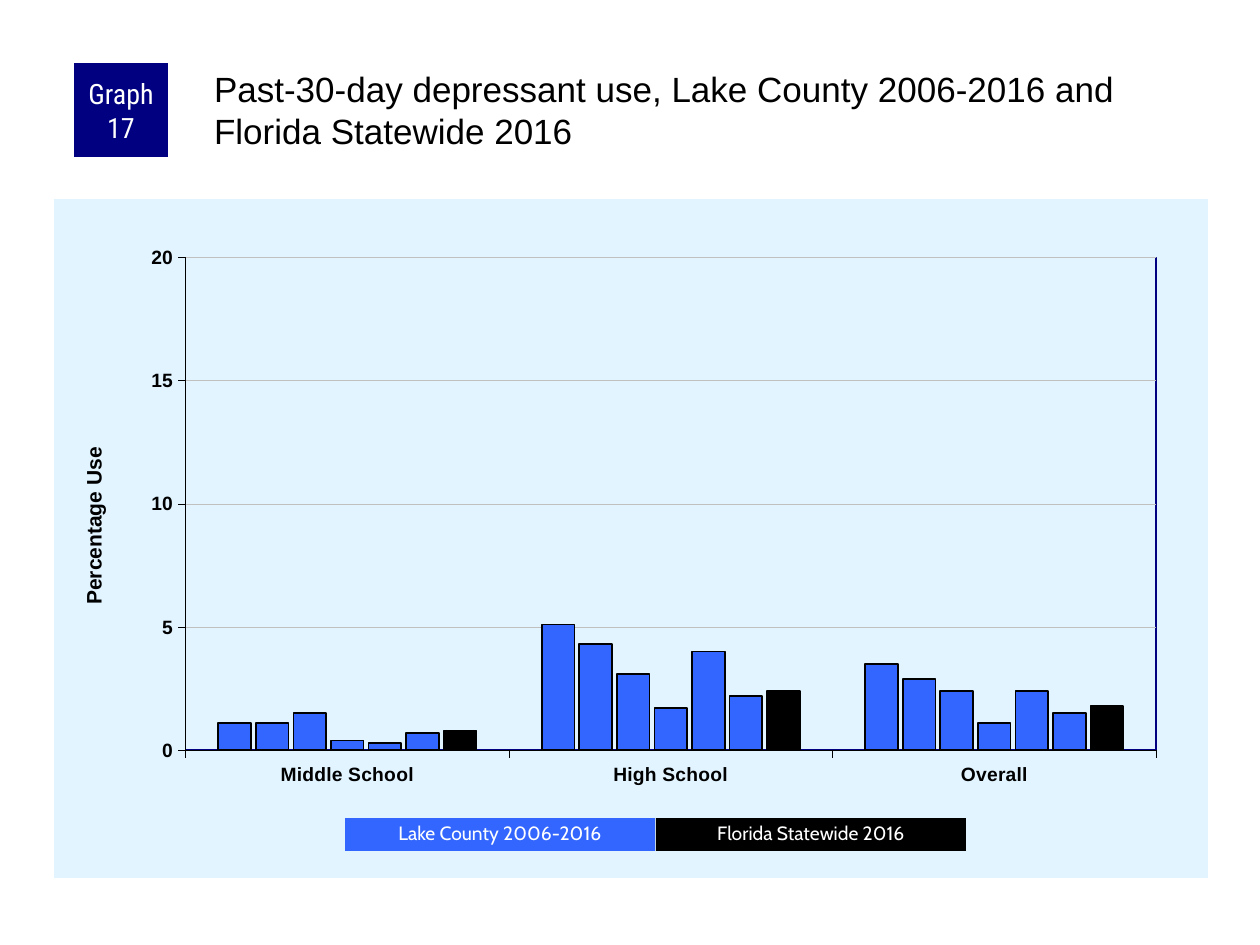
import dataclasses

import pptx
import pptx.chart.data
import pptx.dml.color
import pptx.enum.chart
import pptx.enum.shapes
import pptx.enum.text
import pptx.oxml
import pptx.oxml.ns
import pptx.util

EMU_PER_PX = 914400 / 126
COLORS = {
    "navy": "000080", "county": "3366FF", "state": "000000", "text": "000000",
    "white": "FFFFFF", "panel": "E1F4FF", "grid": "C0C0C0",
}
CATEGORIES = ["Middle School", "High School", "Overall"]
COUNTY_VALUES = [
    (1.1, 5.1, 3.5), (1.1, 4.3, 2.9), (1.5, 3.1, 2.4),
    (0.4, 1.7, 1.1), (0.3, 4, 2.4), (0.7, 2.2, 1.5),
]
STATE_VALUES = (0.8, 2.4, 1.8)
CENTER = pptx.enum.text.PP_ALIGN.CENTER
qn = pptx.oxml.ns.qn


@dataclasses.dataclass
class Label:
    text: str
    left: int
    top: int
    width: int
    height: int
    fill: str
    font: str
    size: int
    line_spacing: float = 1.0
    side_margin: int = 6


LABELS = [
    Label("Graph 17", 74, 63, 94, 94, "navy", "Roboto Condensed", 16),
    Label("Lake County 2006-2016", 345, 818, 310, 33, "county", "Cabin", 11, 0.9),
    Label("Florida Statewide 2016", 656, 818, 310, 33, "state", "Cabin", 11, 0.9),
]


def px(length: int) -> pptx.util.Emu:
    return pptx.util.Emu(round(length * EMU_PER_PX))


def rgb(name: str) -> pptx.dml.color.RGBColor:
    return pptx.dml.color.RGBColor.from_string(COLORS[name])


def set_attributes(target, values: dict) -> None:
    for name, value in values.items():
        setattr(target, name, value)


def format_font(font, size: int, color: str, name: str = "Arial", bold: bool = False) -> None:
    set_attributes(font, {"size": pptx.util.Pt(size), "name": name, "bold": bold})
    font.color.rgb = rgb(color)


def format_line(line, color: str, width: float) -> None:
    line.color.rgb = rgb(color)
    line.width = pptx.util.Pt(width)


def add_label(slide, label: Label) -> None:
    shape = slide.shapes.add_shape(
        pptx.enum.shapes.MSO_SHAPE.RECTANGLE,
        px(label.left), px(label.top), px(label.width), px(label.height),
    )
    shape.shadow.inherit = False
    shape.fill.solid()
    shape.fill.fore_color.rgb = rgb(label.fill)
    shape.line.fill.background()
    set_attributes(shape.text_frame, {
        "text": label.text, "word_wrap": True,
        "vertical_anchor": pptx.enum.text.MSO_ANCHOR.MIDDLE,
        "margin_left": px(label.side_margin), "margin_right": px(label.side_margin),
        "margin_top": 0, "margin_bottom": 0,
    })
    paragraph = shape.text_frame.paragraphs[0]
    set_attributes(paragraph, {"alignment": CENTER, "line_spacing": label.line_spacing})
    format_font(paragraph.runs[0].font, label.size, "white", label.font)


def add_title(slide, text: str) -> None:
    title = slide.shapes.title
    set_attributes(title, {"left": px(210), "top": px(63), "width": px(998), "height": px(105)})
    set_attributes(title.text_frame, {
        "text": text, "word_wrap": True,
        "auto_size": pptx.enum.text.MSO_AUTO_SIZE.NONE,
        "vertical_anchor": pptx.enum.text.MSO_ANCHOR.TOP,
        "margin_left": px(4), "margin_top": px(4), "margin_right": 0, "margin_bottom": 0,
    })
    paragraph = title.text_frame.paragraphs[0]
    paragraph.alignment = pptx.enum.text.PP_ALIGN.LEFT
    format_font(paragraph.runs[0].font, 20, "text")


def set_layout(parent, index: int, inner: bool = False, **fractions: float) -> None:
    """Place a chart part at fractions (x, y, w, h) of the chart area."""
    for old_layout in parent.findall(qn("c:layout")):
        parent.remove(old_layout)
    target = '<c:layoutTarget val="inner"/>' if inner else ""
    modes = "".join(f'<c:{key}Mode val="edge"/>' for key in fractions if key in "xy")
    values = "".join(f'<c:{key} val="{value}"/>' for key, value in fractions.items())
    parent.insert(index, pptx.oxml.parse_xml(
        f'<c:layout {pptx.oxml.ns.nsdecls("c")}><c:manualLayout>{target}{modes}{values}'
        "</c:manualLayout></c:layout>"
    ))


def chart_part_format(fill: str, line: str):
    return pptx.oxml.parse_xml(
        f'<c:spPr {pptx.oxml.ns.nsdecls("c", "a")}>{fill}{line}</c:spPr>'
    )


def solid_fill(color: str) -> str:
    return f'<a:solidFill><a:srgbClr val="{COLORS[color]}"/></a:solidFill>'


def format_axes(chart) -> None:
    for axis in (chart.category_axis, chart.value_axis):
        axis.major_tick_mark = pptx.enum.chart.XL_TICK_MARK.OUTSIDE
        format_font(axis.tick_labels.font, 11, "text", bold=True)
        format_line(axis.format.line, "text", 0.25)
    axis = chart.value_axis
    set_attributes(axis, {
        "minimum_scale": 0, "maximum_scale": 20, "major_unit": 5,
        "has_major_gridlines": True, "has_title": True,
    })
    format_line(axis.major_gridlines.format.line, "grid", 0.25)
    text_frame = axis.axis_title.text_frame
    text_frame.text = "Percentage Use"
    format_font(text_frame.paragraphs[0].runs[0].font, 12, "text", bold=True)
    title = axis.axis_title._element
    title.find(".//" + qn("a:bodyPr")).set("rot", "-5400000")
    set_layout(title, 1, x=0.02, y=0.36)


def add_usage_chart(slide) -> None:
    series_values = COUNTY_VALUES + [STATE_VALUES]
    data = pptx.chart.data.CategoryChartData()
    data.categories = CATEGORIES
    for number, values in enumerate(series_values, start=1):
        data.add_series(f"Series {number}", values)
    chart = slide.shapes.add_chart(
        pptx.enum.chart.XL_CHART_TYPE.COLUMN_CLUSTERED,
        px(54), px(199), px(1154), px(679), data,
    ).chart
    set_attributes(chart, {"has_legend": False, "has_title": False})
    format_font(chart.font, 8, "text")
    plot = chart.plots[0]
    set_attributes(plot, {"gap_width": 200, "overlap": -15, "vary_by_categories": False})
    for series, values in zip(plot.series, series_values):
        series.format.fill.solid()
        series.format.fill.fore_color.rgb = rgb("state" if values is STATE_VALUES else "county")
        format_line(series.format.line, "text", 1)
    format_axes(chart)

    chart_element = chart._chartSpace.find(qn("c:chart"))
    plot_area = chart_element.find(qn("c:plotArea"))
    set_layout(plot_area, 0, inner=True, x=0.114, y=0.086, w=0.841, h=0.726)
    plot_area.append(chart_part_format(
        "<a:noFill/>", f'<a:ln w="12700">{solid_fill("navy")}</a:ln>'
    ))
    chart_element.addnext(chart_part_format(
        solid_fill("panel"), "<a:ln><a:noFill/></a:ln>"
    ))


def main() -> None:
    presentation = pptx.Presentation()
    set_attributes(presentation, {"slide_width": px(1260), "slide_height": px(945)})
    slide = presentation.slides.add_slide(presentation.slide_layouts.get_by_name("Title Only"))
    add_title(slide, "Past-30-day depressant use, Lake County 2006-2016 and Florida Statewide 2016")
    add_usage_chart(slide)
    for label in LABELS:
        add_label(slide, label)
    presentation.save("out.pptx")


if __name__ == "__main__":
    main()
